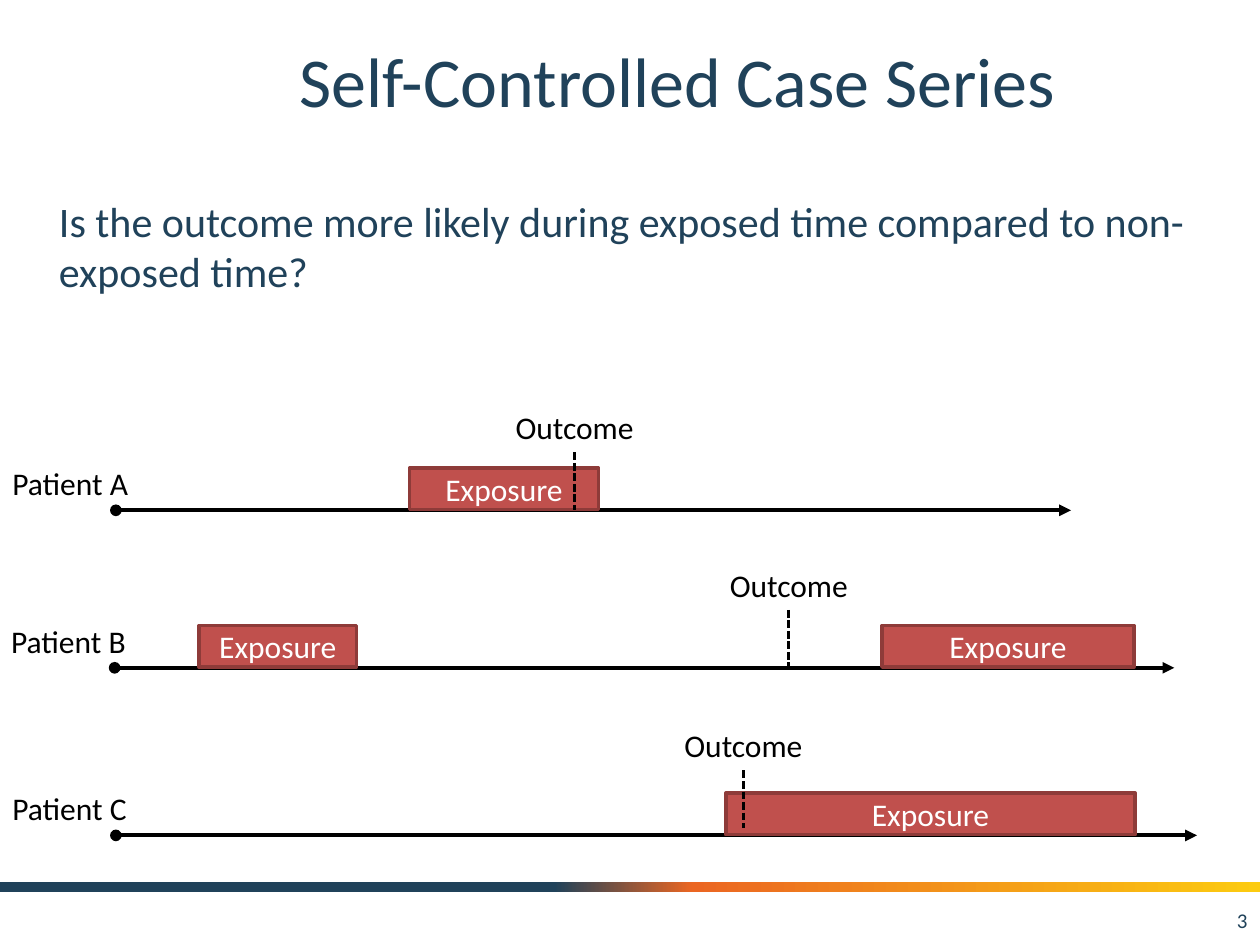
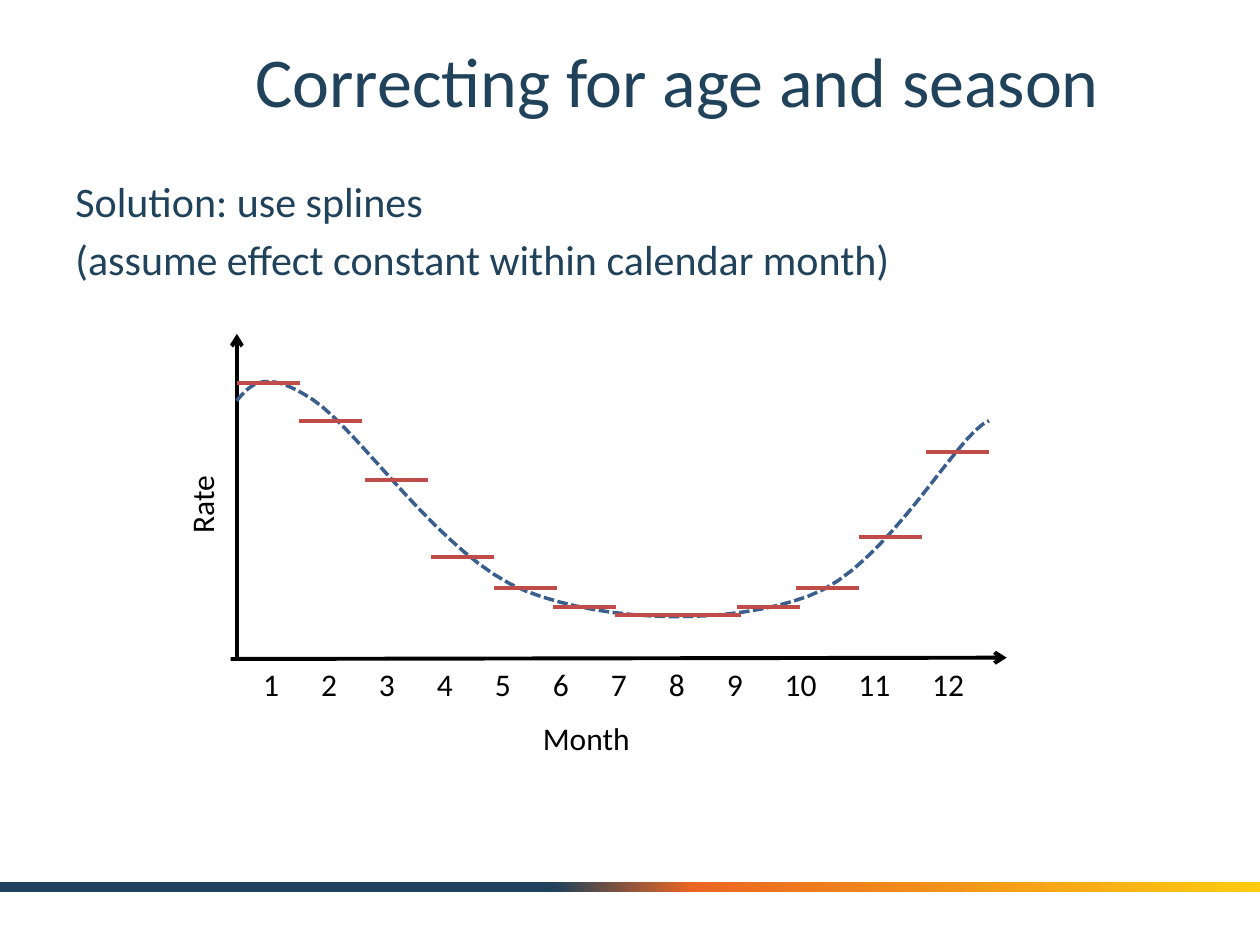
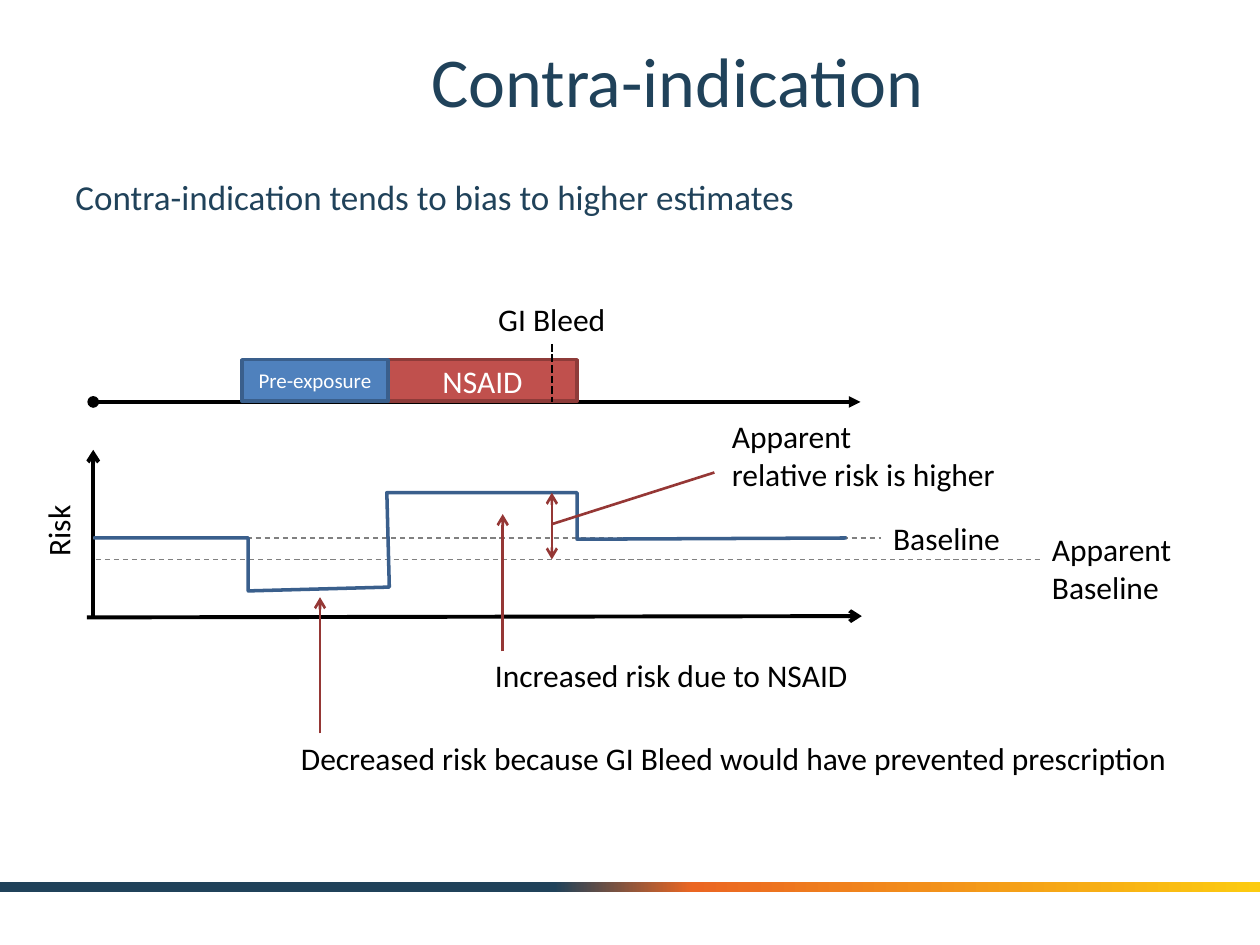
import copy

import lxml.etree as etree
import pptx
import pptx.dml.color
import pptx.enum.dml
import pptx.enum.shapes
import pptx.enum.text
import pptx.oxml.ns
import pptx.util

RGB = pptx.dml.color.RGBColor
NAVY = RGB(0x20, 0x42, 0x5A)
ORANGE = RGB(0xEB, 0x66, 0x22)
YELLOW = RGB(0xFC, 0xCB, 0x10)
BLACK = RGB(0, 0, 0)
WHITE = RGB(255, 255, 255)
GREY = RGB(0x80, 0x80, 0x80)
RED = RGB(0xC0, 0x50, 0x4D)
RED_EDGE = RGB(0x8E, 0x3B, 0x39)
RED_STEP = RGB(0xBF, 0x4C, 0x48)
RED_ARROW = RGB(0x95, 0x37, 0x35)
BLUE = RGB(0x4F, 0x81, 0xBD)
BLUE_EDGE = RGB(0x3A, 0x5F, 0x8C)

FONT = "Calibri"
ALIGN = pptx.enum.text.PP_ALIGN
MID = pptx.enum.text.MSO_ANCHOR.MIDDLE
RECT = pptx.enum.shapes.MSO_SHAPE.RECTANGLE
DASH = pptx.enum.dml.MSO_LINE.DASH
DOTS = pptx.enum.dml.MSO_LINE.SQUARE_DOT
qn = pptx.oxml.ns.qn

# The slide is a grid of 100 columns by 75 rows; a box is (col, row, width, height)
WIDE, HIGH = pptx.util.Inches(10), pptx.util.Inches(7.5)
COLS, ROWS = 100, 75
TITLE = (12.5, 1.7, 82.5, 9.2)
BAND = (0, 70, 100, 0.8)
LINE = 4  # height of a one-line label


def point(box, col, row):
    """Turn a grid place, counted from the corner of a box, into slide units."""
    return round((box[0] + col) * WIDE / COLS), round((box[1] + row) * HIGH / ROWS)


def frame(box):
    return *point(box, 0, 0), round(box[2] * WIDE / COLS), round(box[3] * HIGH / ROWS)


def part(box, col, row, wide, high=LINE):
    return box[0] + col, box[1] + row, wide, high


def style(para, size, color, align):
    para.alignment = align
    para.font.name = FONT
    para.font.size = pptx.util.Pt(size)
    para.font.color.rgb = color


def text(slide, box, words, size=18, color=BLACK, align=ALIGN.LEFT, wrap=False, turn=0):
    shape = slide.shapes.add_textbox(*frame(box))
    shape.rotation = turn
    body = shape.text_frame
    body.word_wrap = wrap
    if not wrap:
        body.auto_size = pptx.enum.text.MSO_AUTO_SIZE.SHAPE_TO_FIT_TEXT
    body.text = words
    for para in body.paragraphs:
        style(para, size, color, align)
    return shape


def ink(shape, color, width, dash=None):
    shape.line.color.rgb = color
    shape.line.width = pptx.util.Pt(width)
    if dash:
        shape.line.dash_style = dash


def rule(slide, box, start, end, color=BLACK, width=2.25, dash=None, head=None, tail=None):
    """Draw a straight line between two places in a box."""
    kind = pptx.enum.shapes.MSO_CONNECTOR.STRAIGHT
    line = slide.shapes.add_connector(kind, *point(box, *start), *point(box, *end))
    ink(line, color, width, dash)
    stroke = line.element.find(".//" + qn("a:ln"))
    for tag, tip in (("a:headEnd", head), ("a:tailEnd", tail)):
        if tip:
            etree.SubElement(stroke, qn(tag), type=tip)
    etree.SubElement(line.element.spPr, qn("a:effectLst"))
    return line


def trace(slide, box, places, dash=None):
    """Draw an open blue outline through places in a box."""
    first, *rest = [point(box, *place) for place in places]
    build = slide.shapes.build_freeform(*first)
    build.add_line_segments(rest, close=False)
    shape = build.convert_to_shape()
    shape.shadow.inherit = False
    shape.fill.background()
    ink(shape, BLUE_EDGE, 2, dash)


def curve(start, bends, steps=16):
    """Return places along joined cubic curves."""
    places = [start]
    for bend in bends:
        ends = (places[-1], *bend)
        for step in range(1, steps + 1):
            t = step / steps
            parts = ((1 - t) ** 3, 3 * t * (1 - t) ** 2, 3 * t * t * (1 - t), t ** 3)
            places.append(tuple(sum(p * e[axis] for p, e in zip(parts, ends))
                                for axis in (0, 1)))
    return places


def band(slide, layout):
    """Draw the gradient band and hand it to the layout all slides share."""
    shape = slide.shapes.add_shape(RECT, *frame(BAND))
    shape.shadow.inherit = False
    shape.line.fill.background()
    shape.fill.gradient()
    shape.fill.gradient_angle = 0
    stops = shape.element.find(".//" + qn("a:gsLst"))
    stops.append(copy.deepcopy(stops[0]))
    shades = ((0.44, NAVY), (0.55, ORANGE), (1, YELLOW))
    for stop, (place, color) in zip(shape.fill.gradient_stops, shades):
        stop.position = place
        stop.color.rgb = color
    layout.element.cSld.spTree.append(shape.element)


def start(deck, title):
    slide = deck.slides.add_slide(deck.slide_layouts[5])
    head = slide.shapes.title
    head.left, head.top, head.width, head.height = frame(TITLE)
    head.text_frame.text = title
    head.text_frame.vertical_anchor = MID
    style(head.text_frame.paragraphs[0], 40, NAVY, ALIGN.CENTER)
    return slide


def bar(slide, box, words, fill=RED, edge=RED_EDGE, size=18):
    shape = slide.shapes.add_shape(RECT, *frame(box))
    shape.shadow.inherit = False
    shape.fill.solid()
    shape.fill.fore_color.rgb = fill
    ink(shape, edge, 2)
    shape.text_frame.text = words
    shape.text_frame.vertical_anchor = MID
    style(shape.text_frame.paragraphs[0], size, WHITE, ALIGN.CENTER)


def lane(slide, box, bars, event, at, wide, lift=0):
    """Draw a time line along the foot of a box, with its bars and one event."""
    base = box[3]
    rule(slide, box, (0, base), (box[2], base), head="oval", tail="triangle")
    for col, span, *look in bars:
        bar(slide, part(box, col, base - 3.35, span, 3.3), *look)
    foot = base - lift
    rule(slide, box, (at, foot - 4.6), (at, foot), width=1.5, dash=DOTS)
    text(slide, part(box, at - wide / 2, foot - 8.6, wide), event, align=ALIGN.CENTER)


def axes(slide, box, name, wide, mid):
    """Draw both axes of a box and the turned name of the upright one."""
    high = box[3]
    rule(slide, box, (0, high), (0, 0), tail="arrow")
    rule(slide, box, (-0.5, high), (box[2], high - 0.1), tail="arrow")
    text(slide, part(box, -2.8 - wide / 2, mid - LINE / 2, wide), name, turn=270)


def months(slide, box):
    """Draw the seasonal curve, its monthly steps and the month numbers."""
    axes(slide, box, "Rate", 10.8, 11.4)
    for month in range(1, 13):
        wide = 3.3 if month < 10 else 4.6
        mid = 4.6 * month - 1.85 if month < 10 else 5.85 * month - 13.7
        text(slide, part(box, mid - wide / 2, box[3], wide), str(month))
    bends = (((1.1, 4), (2.2, 2.7), (6, 5.2)),
             ((9.8, 7.7), (16.3, 17.8), (22.9, 20.4)),
             ((29.5, 23), (39.3, 23.1), (45.4, 20.8)),
             ((51.6, 18.6), (57.2, 7.8), (59.7, 6.9)))
    trace(slide, box, curve((0, 5.3), bends), DOTS)
    steps = ((0, 3.9), (4.9, 6.9), (10.2, 11.6), (15.4, 17.7), (20.4, 20.2), (25.1, 21.7),
             (30, 22.3), (35, 22.3), (39.7, 21.7), (44.4, 20.2), (49.4, 16.1), (54.7, 9.4))
    for col, row in steps:
        rule(slide, box, (col, row), (col + 5, row), RED_STEP)
    text(slide, part(box, 23.3, 30.1, 10.8), "Month")


def risk(slide, box):
    """Draw the risk over time, its base lines and the remarks."""
    axes(slide, box, "Risk", 6.1, 6.4)
    # Base lines
    label = text(slide, part(box, 62.5, 5, 10.6), "Baseline")
    line = rule(slide, box, (0, 7), (62.5, 7), GREY, 0.75, DASH)
    line.end_connect(label, 1)
    rule(slide, box, (0.2, 8.7), (75.1, 8.7), GREY, 0.75, DASH)
    text(slide, part(box, 75.1, 5.9, 12.2, 7.1), "Apparent\nBaseline")
    # Risk outline
    trace(slide, box, ((0, 7), (12.3, 7), (12.3, 11.2), (23.5, 10.9), (23.3, 3.4),
                       (38.4, 3.4), (38.4, 7.1), (59.8, 7)))
    # Arrows
    arrows = (((32.5, 16), (32.5, 5.1), None, "arrow"),
              ((18, 22.5), (18, 11.7), None, "arrow"),
              ((36.4, 3.4), (36.4, 8.7), "arrow", "arrow"),
              ((49.3, 1.8), (36.4, 5.9), None, None))
    for begin, end, head, tail in arrows:
        rule(slide, box, begin, end, RED_ARROW, 1.5, head=head, tail=tail)
    # Remarks
    text(slide, part(box, 15.5, 22.5, 71.6),
         "Decreased risk because GI Bleed would have prevented prescription")
    text(slide, part(box, 30.9, 15.9, 30.3), "Increased risk due to NSAID")
    text(slide, part(box, 49.7, -3.1, 23.1, 7.1), "Apparent\nrelative risk is higher")


def series(deck):
    slide = start(deck, "Self-Controlled Case Series")
    band(slide, deck.slide_layouts[5])
    number = text(slide, (76.7, 71, 23.3, 4), "3", 12, NAVY, ALIGN.RIGHT, True)
    number.text_frame.vertical_anchor = MID
    text(slide, (3.7, 15, 95, 9.1),
         "Is the outcome more likely during exposed time compared to non-exposed time?",
         24, NAVY, wrap=True)
    lanes = (("Patient A", (9.2, 31.9, 75.8, 8.6), ((23.3, 15),), 36.4, 0),
             ("Patient B", (9.1, 44.4, 84.1, 8.6), ((6.7, 12.5), (60.9, 20)), 53.5, 0),
             ("Patient C", (9.2, 57.7, 85.8, 8.6), ((48.4, 32.5),), 49.8, 0.55))
    for name, box, spans, at, lift in lanes:
        bars = [(*span, "Exposure") for span in spans]
        lane(slide, box, bars, "Outcome", at, 11.5, lift)
        text(slide, part(box, -9.2, 4.45, 11.3), name)


def season(deck):
    slide = start(deck, "Correcting for age and season")
    body = text(slide, (5, 13.4, 90, 11),
                "Solution: use splines\n(assume effect constant within calendar month)",
                24, NAVY, wrap=True)
    body.text_frame.paragraphs[1].space_before = pptx.util.Pt(4.8)
    months(slide, (18.8, 26.5, 61.1, 25.8))


def contra(deck):
    slide = start(deck, "Contra-indication")
    text(slide, (5, 13.4, 90, 6), "Contra-indication tends to bias to higher estimates",
         20, NAVY, wrap=True)
    bars = ((23.4, 15, "NSAID"), (11.8, 11.6, "Pre-exposure", BLUE, BLUE_EDGE, 12))
    lane(slide, (7.4, 23.3, 60.9, 8.6), bars, "GI Bleed", 36.4, 10.6)
    risk(slide, (7.4, 35.7, 61, 13.3))


def main():
    deck = pptx.Presentation()
    deck.slide_width, deck.slide_height = WIDE, HIGH
    for build in (series, season, contra):
        build(deck)
    deck.save("out.pptx")


if __name__ == "__main__":
    main()
